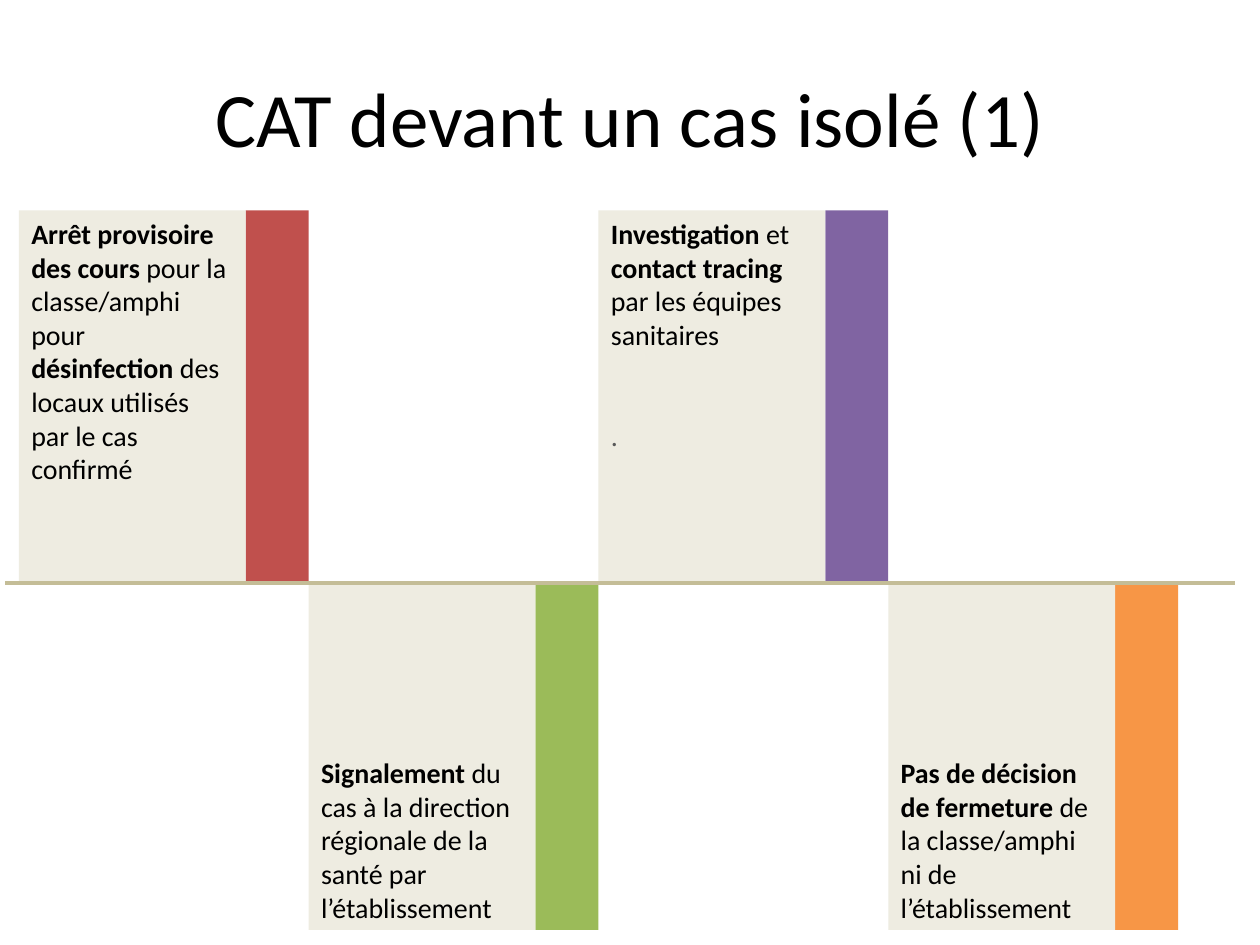
from lxml.etree import SubElement
from pptx import Presentation
from pptx.dml.color import RGBColor
from pptx.enum.shapes import MSO_CONNECTOR, MSO_SHAPE
from pptx.enum.text import MSO_ANCHOR, PP_ALIGN
from pptx.oxml.ns import qn
from pptx.util import Inches, Pt

COLORS = {
    "text": "000000", "muted": "595959", "panel": "EEECE1", "axis": "C4BD97",
    "red": "C0504D", "green": "9BBB59", "purple": "8064A2", "orange": "F79646",
}
FORMATS = {
    "title": {"name": "Calibri", "size": Pt(44), "bold": False},
    "plain": {"name": "Calibri", "size": Pt(16), "bold": False},
    "strong": {"name": "Calibri", "size": Pt(16), "bold": True},
    "dot": {"name": "Calibri", "size": Pt(16), "bold": False},
}
RUN_COLORS = {"dot": "muted"}

# Timeline grid, in inches: each step is a panel followed by a colour band
GRID_LEFT, PANEL_WIDTH, BAND_WIDTH = 0.15, 1.8, 0.5
STEP_WIDTH = PANEL_WIDTH + BAND_WIDTH
UPPER_TOP, AXIS_TOP, LOWER_BOTTOM = 1.67, 4.62, 7.38
DOT_GAP = Pt(38.5)

# Band colour and paragraphs of (format, text) runs for each step
STEPS = [
    ("red", [[("strong", "Arrêt provisoire des cours "),
              ("plain", "pour la classe/amphi pour "),
              ("strong", "désinfection"),
              ("plain", " des locaux utilisés par le cas confirmé")]]),
    ("green", [[("strong", "Signalement"),
                ("plain", " du cas à la direction régionale de la santé "
                          "par l’établissement")]]),
    ("purple", [[("strong", "Investigation "), ("plain", "et"),
                 ("strong", " contact tracing "),
                 ("plain", "par les équipes sanitaires")],
                [("dot", ".")]]),
    ("orange", [[("strong", "Pas de décision de fermeture "),
                 ("plain", "de la classe/amphi ni de l’établissement")]]),
]


def color(name):
    return RGBColor.from_string(COLORS[name])


def write_text(text_frame, paragraphs, anchor, alignment):
    text_frame.word_wrap = True
    text_frame.vertical_anchor = anchor
    for index, runs in enumerate(paragraphs):
        paragraph = text_frame.add_paragraph() if index else text_frame.paragraphs[0]
        paragraph.alignment = alignment
        if index:
            paragraph.space_before = DOT_GAP
        for kind, text in runs:
            run = paragraph.add_run()
            run.text = text
            for attribute, value in FORMATS[kind].items():
                setattr(run.font, attribute, value)
            run.font.color.rgb = color(RUN_COLORS.get(kind, "text"))


def add_title(slide, box, text):
    title = slide.shapes.add_textbox(*map(Inches, box))
    write_text(title.text_frame, [[("title", text)]], MSO_ANCHOR.MIDDLE, PP_ALIGN.CENTER)


def add_block(slide, box, fill):
    block = slide.shapes.add_shape(MSO_SHAPE.RECTANGLE, *map(Inches, box))
    block.shadow.inherit = False
    block.fill.solid()
    block.fill.fore_color.rgb = color(fill)
    block.line.fill.background()
    return block


def add_step(slide, box, band_color, paragraphs, anchor):
    left, top, width, height = box
    panel_width = width - BAND_WIDTH
    add_block(slide, (left + panel_width, top, BAND_WIDTH, height), band_color)
    panel = add_block(slide, (left, top, panel_width, height), "panel")
    write_text(panel.text_frame, paragraphs, anchor, PP_ALIGN.LEFT)


def add_axis(slide, left, right, y):
    axis = slide.shapes.add_connector(
        MSO_CONNECTOR.STRAIGHT, *map(Inches, (left, y, right, y)))
    axis.line.color.rgb = color("axis")
    axis.line.width = Pt(2.25)
    SubElement(axis._element.spPr, qn("a:effectLst"))


def add_timeline(slide):
    # Steps alternate above and below the axis
    rows = [
        (UPPER_TOP, AXIS_TOP - UPPER_TOP, MSO_ANCHOR.TOP),
        (AXIS_TOP, LOWER_BOTTOM - AXIS_TOP, MSO_ANCHOR.BOTTOM),
    ]
    for column, (band_color, paragraphs) in enumerate(STEPS):
        top, height, anchor = rows[column % 2]
        box = (GRID_LEFT + column * STEP_WIDTH, top, STEP_WIDTH, height)
        add_step(slide, box, band_color, paragraphs, anchor)
    add_axis(slide, 0.04, 9.8, 4.63)


def main():
    presentation = Presentation()
    presentation.slide_width, presentation.slide_height = Inches(10), Inches(7.5)
    slide = presentation.slides.add_slide(presentation.slide_layouts[6])
    add_title(slide, (0.5, 0.3, 9, 1.25), "CAT devant un cas isolé (1)")
    add_timeline(slide)
    presentation.save("out.pptx")


if __name__ == "__main__":
    main()
